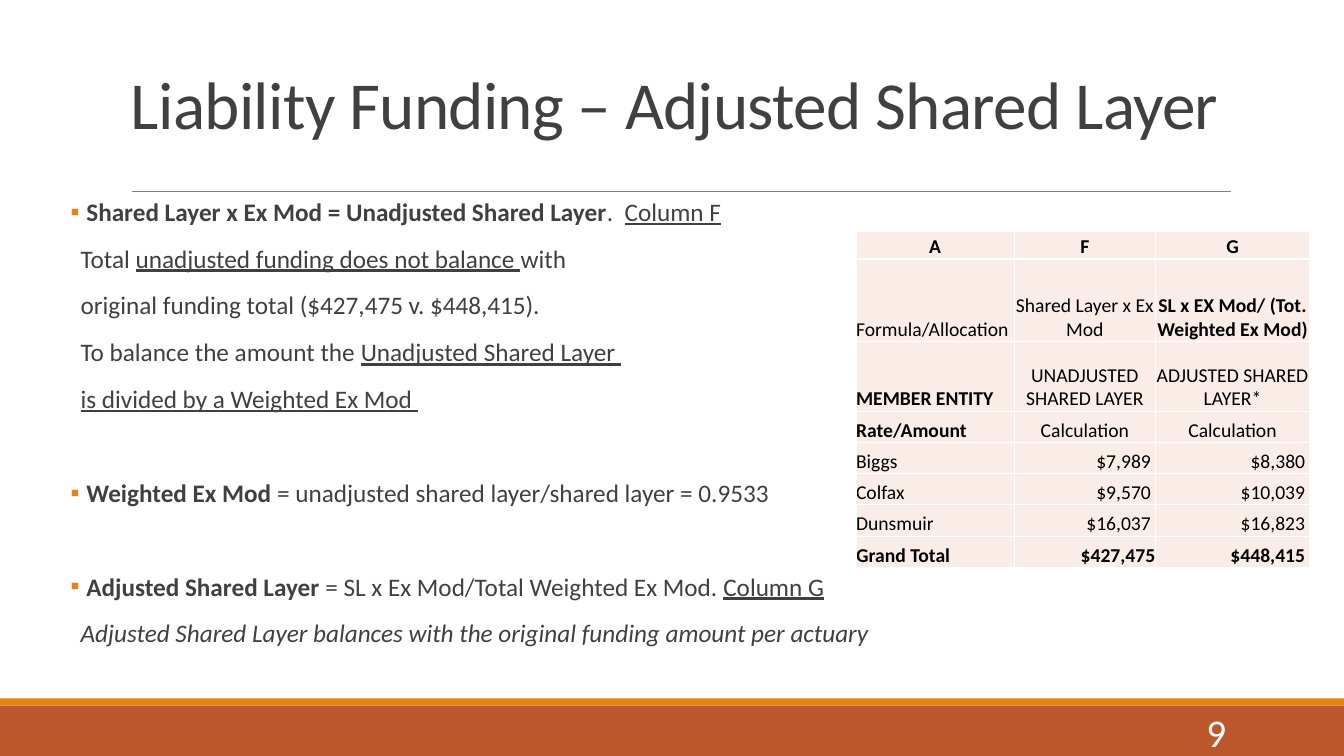
"""Build the slide on liability funding and the adjusted shared layer."""
import lxml.etree
import pptx
import pptx.dml.color
import pptx.enum.shapes
import pptx.enum.text
import pptx.oxml.ns
import pptx.util

PX = 9144
FONT = "Calibri"
COLORS = {"rust": "BD582C", "orange": "E48312", "rule": "808080", "text": "404040",
          "cell": "FAEDE7", "black": "000000", "white": "FFFFFF"}
ALIGN = pptx.enum.text.PP_ALIGN
ANCHOR = pptx.enum.text.MSO_ANCHOR
qn = pptx.oxml.ns.qn


def rgb(name):
    return pptx.dml.color.RGBColor.from_string(COLORS[name])


def style(paragraph, size, color, align=ALIGN.LEFT):
    paragraph.alignment = align
    paragraph.font.name = FONT
    paragraph.font.size = pptx.util.Pt(size)
    paragraph.font.color.rgb = rgb(color)


deck = pptx.Presentation()
deck.slide_width, deck.slide_height = 1333 * PX, 750 * PX
slide = deck.slides.add_slide(deck.slide_layouts[6])
shapes = slide.shapes

for top, height, color in [(700, 50, "rust"), (693, 7, "orange")]:
    band = shapes.add_shape(pptx.enum.shapes.MSO_SHAPE.RECTANGLE, 0, top * PX, 1333 * PX, height * PX)
    band.shadow.inherit = False
    band.fill.solid()
    band.fill.fore_color.rgb = rgb(color)
    band.line.fill.background()

rule = shapes.add_connector(pptx.enum.shapes.MSO_CONNECTOR.STRAIGHT, 131 * PX, 190 * PX, 1221 * PX, 190 * PX)
rule.line.color.rgb = rgb("rule")
rule.line.width = pptx.util.Pt(0.5)
lxml.etree.SubElement(rule._element.spPr, qn("a:effectLst"))

title = shapes.add_textbox(120 * PX, 31 * PX, 1100 * PX, 116 * PX).text_frame
title.word_wrap = True
title.vertical_anchor = ANCHOR.BOTTOM
heading = title.paragraphs[0]
heading.line_spacing = 0.85
style(heading, 48, "text")
heading_run = heading.add_run()
heading_run.text = "Liability Funding – Adjusted Shared Layer"
heading_run._r.get_or_add_rPr().set("spc", "-50")

explanation = [
    ("▪", 12, [(" ", ""), ("Shared Layer x Ex Mod = Unadjusted Shared Layer", "b"), (".  ", ""),
               ("Column F", "u")]),
    ("", 12, [("Total ", ""), ("unadjusted funding does not balance ", "u"), ("with", "")]),
    ("", 12, [("original funding total ($427,475 v. $448,415).", "")]),
    ("", 12, [("To balance the amount the ", ""), ("Unadjusted Shared Layer ", "u")]),
    ("", 12, [("is divided by a Weighted Ex Mod ", "u")]),
    ("▪", 45.5, [(" Weighted Ex Mod ", "b"), ("= unadjusted shared layer/shared layer = 0.9533", "")]),
    ("▪", 45.5, [(" Adjusted Shared Layer ", "b"), ("= SL x Ex Mod/Total Weighted Ex Mod. ", ""),
                 ("Column G", "u")]),
    ("", 12, [("Adjusted Shared Layer balances with the original funding amount per actuary", "i")]),
]
body = shapes.add_textbox(70 * PX, 193 * PX, 1112 * PX, 447 * PX).text_frame
body.word_wrap = True
body.margin_left = body.margin_right = 0
for index, (bullet, space_before, parts) in enumerate(explanation):
    line = body.add_paragraph() if index else body.paragraphs[0]
    line.line_spacing = 0.9
    line.space_before = pptx.util.Pt(space_before)
    line.space_after = pptx.util.Pt(2)
    properties = line._p.get_or_add_pPr()
    properties.set("marL", str(10 * PX))
    properties.set("indent", str(-10 * PX if bullet else 0))
    if bullet:
        bullet_color = lxml.etree.SubElement(properties, qn("a:buClr"))
        lxml.etree.SubElement(bullet_color, qn("a:srgbClr"), val=COLORS["orange"])
        lxml.etree.SubElement(properties, qn("a:buFont"), typeface=FONT)
        lxml.etree.SubElement(properties, qn("a:buChar"), char=bullet)
    style(line, 18, "text")
    for words, emphasis in parts:
        run = line.add_run()
        run.text = words
        if emphasis == "b":
            run.font.bold = True
        elif emphasis == "u":
            run.font.underline = True
        elif emphasis == "i":
            run.font.italic = True

funding = [
    ("A", " F ", " G "),
    ("Formula/Allocation", "Shared Layer x Ex Mod", "SL x EX Mod/ (Tot. Weighted Ex Mod)"),
    ("MEMBER ENTITY", "UNADJUSTED SHARED LAYER", "ADJUSTED SHARED LAYER*"),
    ("Rate/Amount", "Calculation", "Calculation"),
    ("Biggs", "$7,989 ", "$8,380 "),
    ("Colfax", "$9,570 ", "$10,039 "),
    ("Dunsmuir", "$16,037 ", "$16,823 "),
    ("Grand Total", "$427,475", "$448,415 "),
]
bold_cells = {(1, 2), (2, 0), (3, 0)}
bold_rows = {0, 7}
table = shapes.add_table(8, 3, 849 * PX, 230 * PX, 450 * PX, 333 * PX).table
table.first_row = table.horz_banding = False
for column, width in zip(table.columns, [157, 140, 153]):
    column.width = width * PX
for row, height in zip(table.rows, [27, 82, 69] + [31] * 5):
    row.height = height * PX
for r, entries in enumerate(funding):
    for c, entry in enumerate(entries):
        cell = table.cell(r, c)
        cell.margin_left = cell.margin_right = cell.margin_top = cell.margin_bottom = 0
        cell.vertical_anchor = ANCHOR.BOTTOM
        for side in ("lnL", "lnR", "lnT", "lnB"):
            border = lxml.etree.SubElement(cell._tc.get_or_add_tcPr(), qn("a:" + side), w="12700")
            border_fill = lxml.etree.SubElement(border, qn("a:solidFill"))
            lxml.etree.SubElement(border_fill, qn("a:srgbClr"), val=COLORS["white"])
        cell.fill.solid()
        cell.fill.fore_color.rgb = rgb("cell")
        cell.text = entry
        if r == 0 or (c and r < 4):
            align = ALIGN.CENTER
        else:
            align = ALIGN.RIGHT if c else ALIGN.LEFT
        cell_text = cell.text_frame.paragraphs[0]
        style(cell_text, 14, "black", align)
        cell_text.font.bold = r in bold_rows or (r, c) in bold_cells

page_number = shapes.add_textbox(1083 * PX, 706 * PX, 143 * PX, 40 * PX).text_frame
page_number.word_wrap = True
page_number.vertical_anchor = ANCHOR.MIDDLE
page_number.text = "9"
style(page_number.paragraphs[0], 28, "white", ALIGN.RIGHT)

deck.save("out.pptx")
